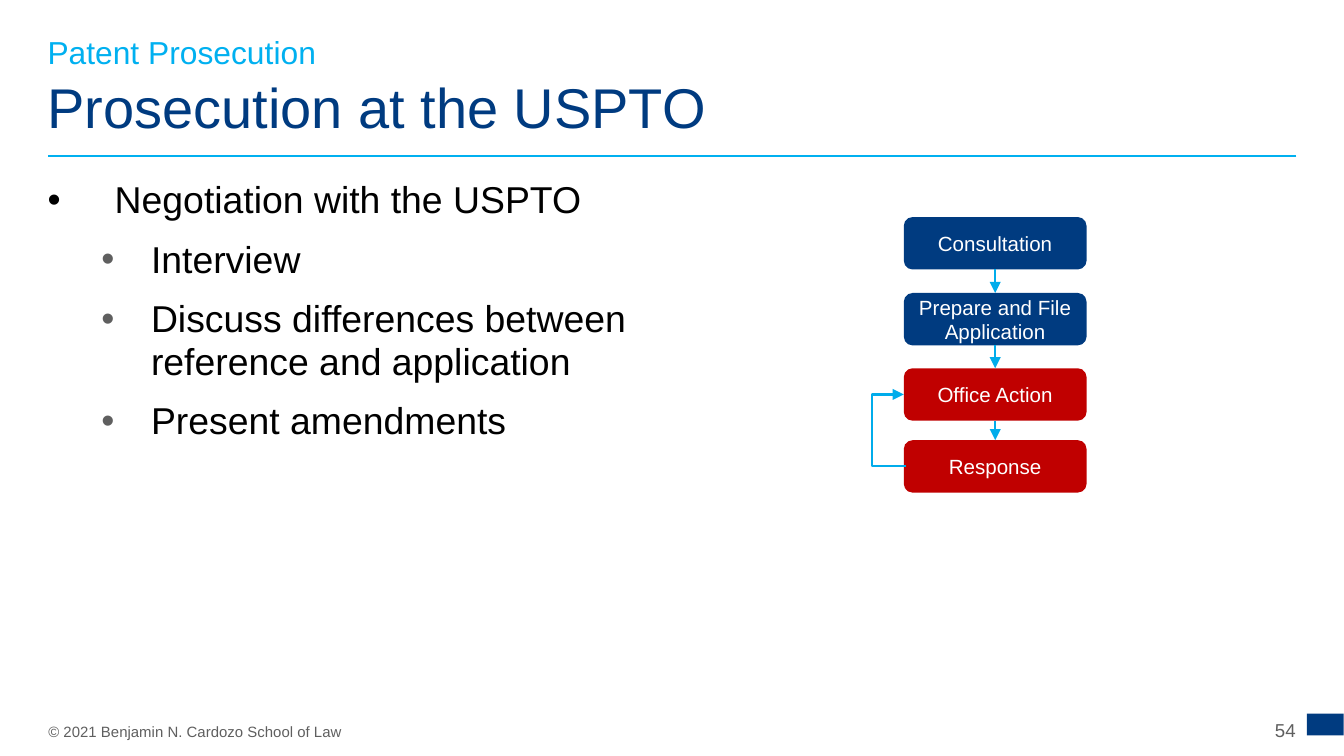
from itertools import pairwise

from lxml.etree import SubElement
from pptx import Presentation
from pptx.dml.color import RGBColor
from pptx.enum.shapes import MSO_CONNECTOR, MSO_SHAPE
from pptx.enum.text import MSO_ANCHOR, PP_ALIGN
from pptx.oxml.ns import qn
from pptx.util import Inches, Pt

COLORS = {
    "navy": "003B80", "cyan": "00B0F0", "arrow": "00ACEB", "red": "C00000",
    "gray": "5F5F5F", "black": "000000", "white": "FFFFFF",
}
SLIDE_WIDTH = Inches(10)
SLIDE_HEIGHT = SLIDE_WIDTH * 9 // 16
COLUMNS = 100
MARGIN = 3.54
CONTENT_WIDTH = COLUMNS - 2 * MARGIN
STEP_LEFT, STEP_WIDTH, STEP_HEIGHT = 67.25, 13.6, 3.9
LOOP_LEFT = 64.9

STEPS = [
    ("Consultation", "navy", 16.15),
    ("Prepare and File Application", "navy", 21.8),
    ("Office Action", "red", 27.4),
    ("Response", "red", 32.75),
]
BULLETS = [
    ("Negotiation with the USPTO", 0),
    ("Interview", 1),
    ("Discuss differences between reference and application", 1),
    ("Present amendments", 1),
]
LEVELS = [
    {"margin": 0.5, "indent": -0.5, "color": "black", "before": 0},
    {"margin": 0.77, "indent": -0.37, "color": "gray", "before": 3},
]


def grid(*cells):
    return [round(cell * SLIDE_WIDTH / COLUMNS) for cell in cells]


def rgb(name):
    return RGBColor.from_string(COLORS[name])


def apply(target, values):
    for name, value in values.items():
        setattr(target, name, value)


def set_frame(frame, inset=0, anchor=MSO_ANCHOR.TOP):
    sides = ("left", "top", "right", "bottom")
    apply(frame, {f"margin_{side}": Inches(inset) for side in sides})
    apply(frame, {"word_wrap": True, "vertical_anchor": anchor})


def write(paragraph, text, size, color, **layout):
    apply(paragraph, layout)
    run = paragraph.add_run()
    run.text = text
    apply(run.font, {"name": "Arial", "size": Pt(size)})
    run.font.color.rgb = rgb(color)


def add_text(slide, cells, text, size, color, anchor=MSO_ANCHOR.TOP, **layout):
    frame = slide.shapes.add_textbox(*grid(*cells)).text_frame
    set_frame(frame, anchor=anchor)
    write(frame.paragraphs[0], text, size, color, **layout)


def add_bullet(paragraph, level):
    properties = paragraph._p.get_or_add_pPr()
    properties.set("marL", str(Inches(level["margin"])))
    properties.set("indent", str(Inches(level["indent"])))
    color = SubElement(properties, qn("a:buClr"))
    SubElement(color, qn("a:srgbClr"), val=COLORS[level["color"]])
    SubElement(properties, qn("a:buFont"), typeface="Arial")
    SubElement(properties, qn("a:buChar"), char="•")


def add_bullets(slide, cells):
    frame = slide.shapes.add_textbox(*grid(*cells)).text_frame
    set_frame(frame)
    for index, (text, depth) in enumerate(BULLETS):
        paragraph = frame.add_paragraph() if index else frame.paragraphs[0]
        level = LEVELS[depth]
        add_bullet(paragraph, level)
        write(paragraph, text, 20, "black", level=depth, line_spacing=0.95,
              space_before=Pt(level["before"]), space_after=Pt(6))


def add_block(slide, kind, cells, color):
    shape = slide.shapes.add_shape(kind, *grid(*cells))
    shape.shadow.inherit = False
    shape.fill.solid()
    shape.fill.fore_color.rgb = rgb(color)
    shape.line.fill.background()
    return shape


def add_step(slide, text, color, top):
    cells = (STEP_LEFT, top, STEP_WIDTH, STEP_HEIGHT)
    shape = add_block(slide, MSO_SHAPE.ROUNDED_RECTANGLE, cells, color)
    set_frame(shape.text_frame, 0.08, MSO_ANCHOR.MIDDLE)
    write(shape.text_frame.paragraphs[0], text, 11, "white",
          alignment=PP_ALIGN.CENTER)
    return shape


def add_line(slide, kind, cells, color, width, arrow=False):
    connector = slide.shapes.add_connector(kind, *grid(*cells))
    connector.line.color.rgb = rgb(color)
    connector.line.width = Pt(width)
    if arrow:
        SubElement(connector.line._get_or_add_ln(), qn("a:tailEnd"), type="triangle")
    SubElement(connector._element.spPr, qn("a:effectLst"))
    return connector


def add_flow(slide):
    shapes = [add_step(slide, *step) for step in STEPS]
    for upper, lower in pairwise(shapes):
        arrow = add_line(slide, MSO_CONNECTOR.STRAIGHT, (0, 0, 0, 0), "arrow", 1.25, True)
        arrow.begin_connect(upper, 2)
        arrow.end_connect(lower, 0)


def add_loop(slide):
    action_middle, response_middle = [top + STEP_HEIGHT / 2 for _, _, top in STEPS[2:]]
    start, end = STEP_LEFT + 0.15, STEP_LEFT
    cells = (start, response_middle, end, action_middle)
    loop = add_line(slide, MSO_CONNECTOR.ELBOW, cells, "arrow", 1.25, True)
    bend = round((start - LOOP_LEFT) / (start - end) * 100000)
    guides = loop._element.spPr.find(qn("a:prstGeom")).get_or_add_avLst()
    SubElement(guides, qn("a:gd"), name="adj1", fmla=f"val {bend}")


def main():
    presentation = Presentation()
    apply(presentation, {"slide_width": SLIDE_WIDTH, "slide_height": SLIDE_HEIGHT})
    slide = presentation.slides.add_slide(presentation.slide_layouts[6])
    add_block(slide, MSO_SHAPE.RECTANGLE, (97.24, 53.1, 2.73, 1.63), "navy")
    add_line(slide, MSO_CONNECTOR.STRAIGHT,
             (COLUMNS - MARGIN, 11.6, MARGIN, 11.6), "cyan", 1)
    add_text(slide, (3.6, 53.75, 85.7, 1.3),
             "© 2021 Benjamin N. Cardozo School of Law", 8, "gray", space_after=Pt(6))
    add_text(slide, (MARGIN, 4.3, CONTENT_WIDTH, 6.1), "Prosecution at the USPTO",
             30, "navy", MSO_ANCHOR.BOTTOM, line_spacing=0.85)
    add_text(slide, (91, 53.5, 5.4, 1.6), "54", 10, "gray",
             MSO_ANCHOR.MIDDLE, alignment=PP_ALIGN.RIGHT)
    add_bullets(slide, (MARGIN, 13.36, 52.4, 37.2))
    add_text(slide, (MARGIN, 3.1, CONTENT_WIDTH, 2.4), "Patent Prosecution",
             17, "cyan", line_spacing=0.75, space_after=Pt(6))
    add_flow(slide)
    add_loop(slide)
    presentation.save("out.pptx")


if __name__ == "__main__":
    main()
